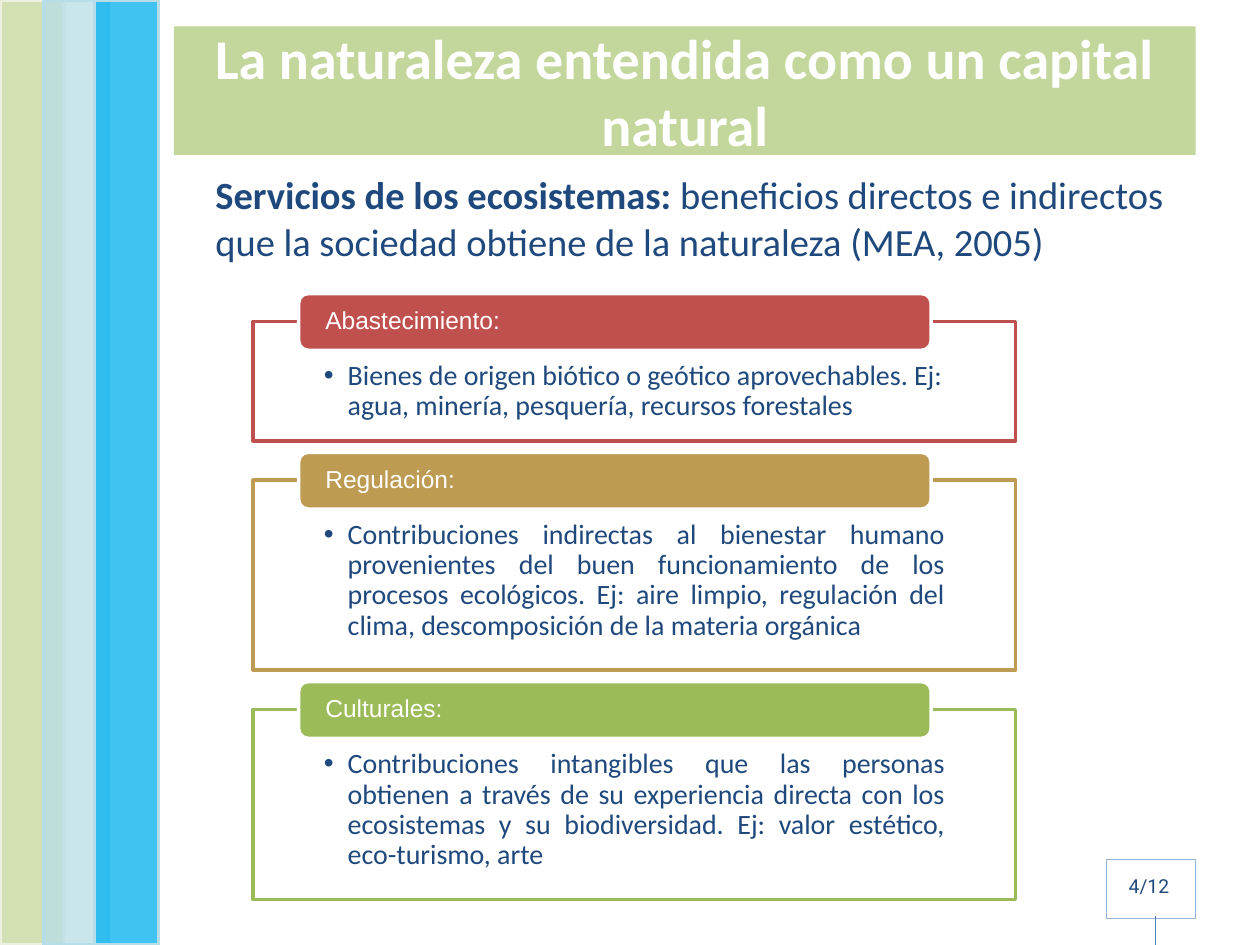
from lxml.etree import SubElement
from pptx import Presentation
from pptx.dml.color import RGBColor
from pptx.enum.shapes import MSO_CONNECTOR as CONNECTOR, MSO_SHAPE as SHAPE
from pptx.enum.text import MSO_ANCHOR as ANCHOR, MSO_AUTO_SIZE as AUTO_SIZE, PP_ALIGN as ALIGN
from pptx.oxml.ns import qn
from pptx.util import Inches, Pt

COLORS = {
    "white": "FFFFFF", "navy": "1F497D", "pale_green": "C3D69B",
    "ivory": "EBF1DE", "pale_blue": "B7DEE8", "sky": "00B0F0",
    "red": "C0504D", "ochre": "BD9B53", "green": "9BBB59",
    "page_border": "95B3D7", "page_line": "4B7EBC",
}

# Heading, description, colour, frame height, alignment
SERVICES = [
    ("Abastecimiento:",
     "Bienes de origen biótico o geótico aprovechables. Ej: agua, minería, "
     "pesquería, recursos forestales", "red", 0.95, ALIGN.LEFT),
    ("Regulación:",
     "Contribuciones indirectas al bienestar humano provenientes del buen "
     "funcionamiento de los procesos ecológicos. Ej: aire limpio, regulación "
     "del clima, descomposición de la materia orgánica",
     "ochre", 1.51, ALIGN.JUSTIFY),
    ("Culturales:",
     "Contribuciones intangibles que las personas obtienen a través de su "
     "experiencia directa con los ecosistemas y su biodiversidad. Ej: valor "
     "estético, eco-turismo, arte", "green", 1.51, ALIGN.JUSTIFY),
]
FIRST_FRAME_TOP = 2.55
FRAME_GAP = 0.31
TAB_RISE = 0.22


def rgb(name):
    return RGBColor.from_string(COLORS[name])


def place(shape, left, top, width, height):
    shape.left, shape.top = Inches(left), Inches(top)
    shape.width, shape.height = Inches(width), Inches(height)


def style_font(font, name, size, color, bold=None):
    font.name, font.size, font.bold = name, Pt(size), bold
    font.color.rgb = rgb(color)


def set_insets(frame, left, top, right, bottom):
    frame.margin_left, frame.margin_top = Inches(left), Inches(top)
    frame.margin_right, frame.margin_bottom = Inches(right), Inches(bottom)


def set_indent(paragraph, indent, bullet=None):
    props = paragraph._p.get_or_add_pPr()
    props.set("marL", str(Inches(indent)))
    props.set("indent", str(-Inches(indent)))
    if bullet:
        SubElement(props, qn("a:buFont")).set("typeface", "Arial")
        SubElement(props, qn("a:buChar")).set("char", bullet)
    else:
        SubElement(props, qn("a:buNone"))


def add_box(slide, bounds, fill, line, line_width, opacity=100, kind=SHAPE.RECTANGLE):
    box = slide.shapes.add_shape(kind, *map(Inches, bounds))
    box.shadow.inherit = False
    if fill:
        box.fill.solid()
        box.fill.fore_color.rgb = rgb(fill)
        if opacity < 100:
            color = box.fill._xPr.find(qn("a:solidFill"))[0]
            SubElement(color, qn("a:alpha")).set("val", str(opacity * 1000))
    else:
        box.fill.background()
    box.line.color.rgb = rgb(line)
    box.line.width = Pt(line_width)
    return box


def add_title(slide):
    title = slide.shapes.title
    place(title, 1.38, 0.21, 8.11, 1.02)
    title.fill.solid()
    title.fill.fore_color.rgb = rgb("pale_green")
    frame = title.text_frame
    frame.text = "La naturaleza entendida como un capital natural"
    frame.auto_size = AUTO_SIZE.NONE
    frame.vertical_anchor = ANCHOR.MIDDLE
    frame.paragraphs[0].alignment = ALIGN.CENTER
    style_font(frame.paragraphs[0].font, "Calibri", 32, "white", True)


def add_definition(slide):
    body = slide.placeholders[1]
    place(body, 1.61, 1.31, 7.95, 0.84)
    body.text_frame.auto_size = AUTO_SIZE.NONE
    definition = body.text_frame.paragraphs[0]
    definition.space_before = Pt(0)
    set_indent(definition, 0)
    style_font(definition.font, "Calibri", 22, "navy")
    term = definition.add_run()
    term.text = "Servicios de los ecosistemas: "
    term.font.bold = True
    definition.add_run().text = ("beneficios directos e indirectos que la sociedad "
                                 "obtiene de la naturaleza (MEA, 2005)")


def add_service(slide, top, heading, description, color, height, alignment):
    # Framed description
    panel = add_box(slide, (2.01, top, 6.05, height), "white", color, 2, 90)
    frame = panel.text_frame
    frame.word_wrap = True
    frame.vertical_anchor = ANCHOR.TOP
    set_insets(frame, 0.56, 0.32, 0.56, 0.12)
    item = frame.paragraphs[0]
    item.text = description
    item.alignment = alignment
    item.line_spacing = 0.9
    set_indent(item, 0.19, "•")
    style_font(item.font, "Calibri", 16, "navy")

    # Heading tab over the top edge
    tab = add_box(slide, (2.37, top - TAB_RISE, 5.02, 0.45), color, "white", 2,
                  kind=SHAPE.ROUNDED_RECTANGLE)
    set_insets(tab.text_frame, 0.19, 0, 0.19, 0)
    tab.text_frame.vertical_anchor = ANCHOR.MIDDLE
    label = tab.text_frame.paragraphs[0]
    label.text = heading
    label.alignment = ALIGN.LEFT
    label.line_spacing = 0.9
    style_font(label.font, "Arial", 14, "white")


def add_page_number(slide):
    add_box(slide, (8.78, 6.82, 0.71, 0.47), None, "page_border", 0.25)
    stem = slide.shapes.add_connector(
        CONNECTOR.STRAIGHT, Inches(9.17), Inches(7.5), Inches(9.17), Inches(7.27))
    stem.line.color.rgb = rgb("page_line")
    stem.line.width = Pt(0.75)
    SubElement(stem._element.spPr, qn("a:effectLst"))
    number = slide.shapes.add_textbox(*map(Inches, (8.86, 6.89, 0.63, 0.29)))
    number.text_frame.word_wrap = True
    number.text_frame.text = "4/12"
    style_font(number.text_frame.paragraphs[0].font, "Roboto", 11, "navy")


def main():
    deck = Presentation()
    deck.slide_width, deck.slide_height = Inches(10), Inches(7.5)
    slide = deck.slides.add_slide(deck.slide_layouts[1])

    add_title(slide)

    # Overlapping side bands
    for left, fill, border in [(0, "pale_green", "ivory"),
                               (0.35, "pale_blue", "pale_blue"),
                               (0.75, "sky", "pale_blue")]:
        add_box(slide, (left, 0, 0.51, 7.5), fill, border, 2, 75)

    add_page_number(slide)

    # Stack of ecosystem services
    top = FIRST_FRAME_TOP
    for heading, description, color, height, alignment in SERVICES:
        add_service(slide, top, heading, description, color, height, alignment)
        top += height + FRAME_GAP

    add_definition(slide)
    deck.save("out.pptx")


if __name__ == "__main__":
    main()
